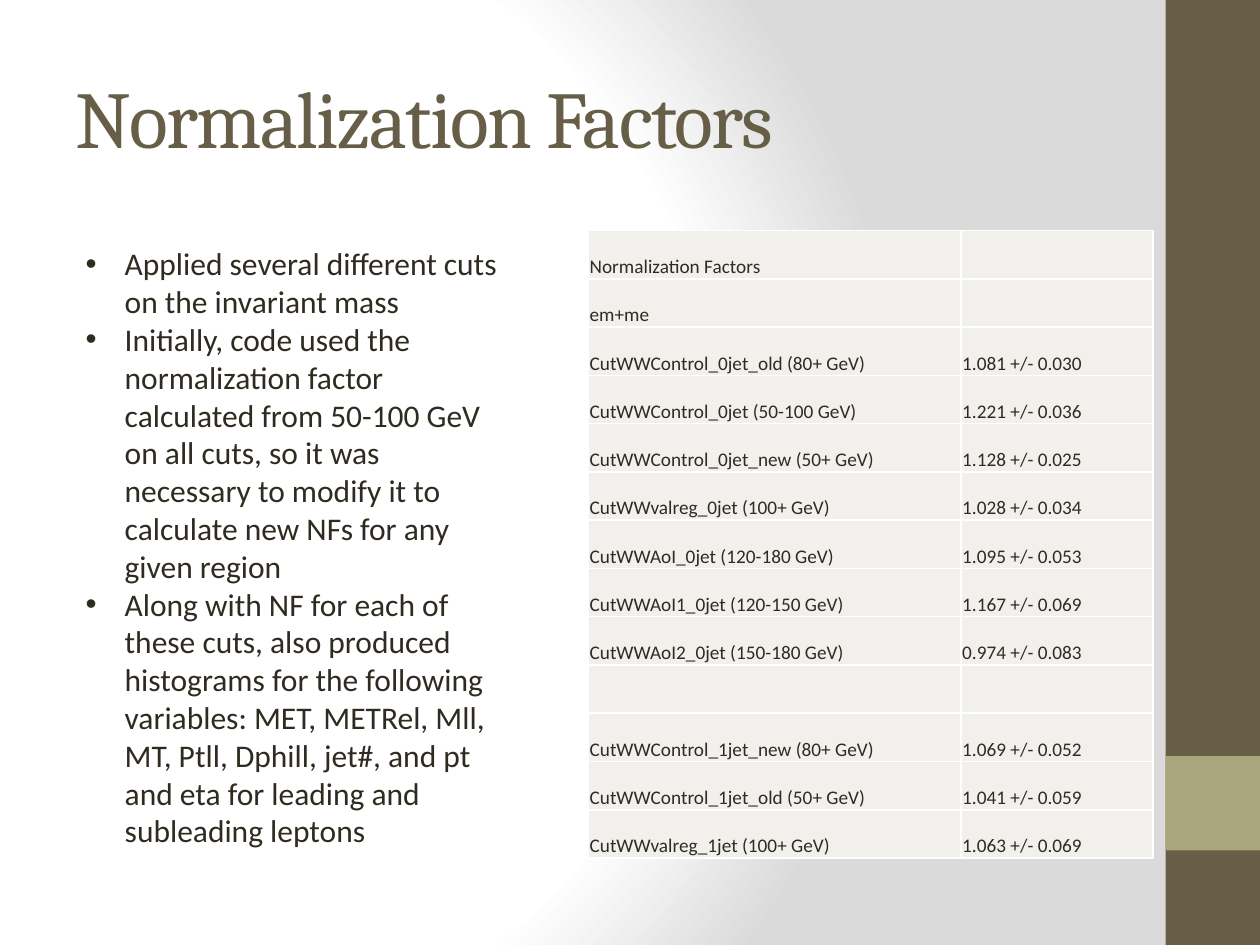
from dataclasses import dataclass
from typing import NamedTuple

from lxml import etree
from pptx import Presentation
from pptx.dml.color import RGBColor
from pptx.enum.shapes import MSO_SHAPE
from pptx.enum.text import MSO_ANCHOR, MSO_AUTO_SIZE, PP_ALIGN
from pptx.oxml import parse_xml
from pptx.oxml.ns import nsdecls, qn
from pptx.util import Inches, Pt

RECTANGLE = MSO_SHAPE.RECTANGLE
TOP, MIDDLE, BOTTOM = MSO_ANCHOR.TOP, MSO_ANCHOR.MIDDLE, MSO_ANCHOR.BOTTOM
LEFT = PP_ALIGN.LEFT
FIT_NONE, FIT_SHAPE = MSO_AUTO_SIZE.NONE, MSO_AUTO_SIZE.SHAPE_TO_FIT_TEXT
TITLE_AND_CONTENT = 1


@dataclass(frozen=True)
class Theme:
    heading_font: str = "Cambria"
    body_font: str = "Calibri"
    title_size: int = 46
    body_size: int = 18
    table_size: int = 11
    brown: str = "675E47"
    olive: str = "A9A57C"
    ink: str = "2F2B20"
    cell: str = "F1F0EC"
    white: str = "FFFFFF"
    grey: str = "DADADA"


class Box(NamedTuple):
    left: int
    top: int
    width: int
    height: int


THEME = Theme()
WIDTH, HEIGHT = Inches(10), Inches(7.5)

TITLE = "Normalization Factors"
POINTS = [
    "Applied several different cuts on the invariant mass",
    "Initially, code used the normalization factor calculated from 50-100 GeV on all cuts, "
    "so it was necessary to modify it to calculate new NFs for any given region",
    "Along with NF for each of these cuts, also produced histograms for the following "
    "variables: MET, METRel, Mll, MT, Ptll, Dphill, jet#, and pt and eta for leading and "
    "subleading leptons",
]
FACTORS = [
    ("Normalization Factors", ""),
    ("em+me", ""),
    ("CutWWControl_0jet_old (80+ GeV)", "1.081 +/- 0.030"),
    ("CutWWControl_0jet (50-100 GeV)", "1.221 +/- 0.036"),
    ("CutWWControl_0jet_new (50+ GeV)", "1.128 +/- 0.025"),
    ("CutWWvalreg_0jet (100+ GeV)", "1.028 +/- 0.034"),
    ("CutWWAoI_0jet (120-180 GeV)", "1.095 +/- 0.053"),
    ("CutWWAoI1_0jet (120-150 GeV)", "1.167 +/- 0.069"),
    ("CutWWAoI2_0jet (150-180 GeV)", "0.974 +/- 0.083"),
    ("", ""),
    ("CutWWControl_1jet_new (80+ GeV)", "1.069 +/- 0.052"),
    ("CutWWControl_1jet_old (50+ GeV)", "1.041 +/- 0.059"),
    ("CutWWvalreg_1jet (100+ GeV)", "1.063 +/- 0.069"),
]


def share(left, top, width, height):
    """Box given in percent of the slide's size."""
    return Box(int(WIDTH * left / 100), int(HEIGHT * top / 100),
               int(WIDTH * width / 100), int(HEIGHT * height / 100))


def place(shape, box):
    shape.left, shape.top, shape.width, shape.height = box


def write(frame, lines, *, font, size, color, bullet=None, indent=0, tracking=None):
    for index, line in enumerate(lines):
        para = frame.paragraphs[0] if index == 0 else frame.add_paragraph()
        if bullet:
            properties = para._p.get_or_add_pPr()
            properties.set("marL", str(indent))
            properties.set("indent", str(-indent))
            etree.SubElement(properties, qn("a:buFont")).set("typeface", "Arial")
            etree.SubElement(properties, qn("a:buChar")).set("char", bullet)
        para.alignment = LEFT
        para.space_before = para.space_after = Pt(0)
        span = para.add_run()
        span.text = line
        span.font.name = font
        span.font.size = Pt(size)
        span.font.color.rgb = RGBColor.from_string(color)
        if tracking is not None:
            span._r.get_or_add_rPr().set("spc", str(int(tracking * 100)))


def paint_background(page):
    stops = [(0, THEME.white), (75, THEME.white), (100, THEME.grey)]
    stop_xml = "".join(
        f'<a:gs pos="{position * 1000}"><a:srgbClr val="{color}"/></a:gs>'
        for position, color in stops)
    background = parse_xml(
        f'<p:bg {nsdecls("p", "a")}><p:bgPr><a:gradFill rotWithShape="1">'
        f'<a:gsLst>{stop_xml}</a:gsLst><a:path path="circle">'
        '<a:fillToRect l="20000" t="50000" r="100000" b="50000"/></a:path>'
        '</a:gradFill><a:effectLst/></p:bgPr></p:bg>')
    page._element.cSld.insert(0, background)


def add_side_band(page, box):
    # The accent is the fifth square of the band, counted from the box's top in widths
    accent = Box(box.left, box.top + 8 * box.width, box.width, box.width)
    for area, color in ((box, THEME.brown), (accent, THEME.olive)):
        panel = page.shapes.add_shape(RECTANGLE, *area)
        panel.shadow.inherit = False
        panel.fill.solid()
        panel.fill.fore_color.rgb = RGBColor.from_string(color)
        panel.line.fill.background()


def fill_title(page, box):
    title = page.shapes.title
    place(title, box)
    frame = title.text_frame
    frame.auto_size = FIT_NONE
    frame.vertical_anchor = MIDDLE
    write(frame, [TITLE], font=THEME.heading_font, size=THEME.title_size,
          color=THEME.brown, tracking=-1)


def fill_points(page, box):
    body = page.placeholders[1]
    place(body, box)
    frame = body.text_frame
    frame.word_wrap = True
    frame.auto_size = FIT_SHAPE
    frame.vertical_anchor = TOP
    write(frame, POINTS, font=THEME.body_font, size=THEME.body_size,
          color=THEME.ink, bullet="•", indent=Inches(0.31))


def style_cell(cell):
    cell.margin_left = cell.margin_right = cell.margin_top = Inches(0.01)
    cell.margin_bottom = 0
    cell.vertical_anchor = BOTTOM
    properties = cell._tc.get_or_add_tcPr()
    for side in ("lnL", "lnR", "lnT", "lnB"):
        properties.append(parse_xml(
            f'<a:{side} {nsdecls("a")} w="{Pt(1)}"><a:solidFill>'
            f'<a:srgbClr val="{THEME.white}"/></a:solidFill></a:{side}>'))
    cell.fill.solid()
    cell.fill.fore_color.rgb = RGBColor.from_string(THEME.cell)


def add_factor_table(page, box):
    table = page.shapes.add_table(len(FACTORS), 2, *box).table
    table.first_row = table.horz_banding = False
    for column, part in zip(table.columns, (0.66, 0.34)):
        column.width = int(box.width * part)
    for row, values in zip(table.rows, FACTORS):
        row.height = box.height // len(FACTORS)
        for cell, value in zip(row.cells, values):
            style_cell(cell)
            write(cell.text_frame, [value], font=THEME.body_font,
                  size=THEME.table_size, color=THEME.ink)


def main():
    deck = Presentation()
    deck.slide_width, deck.slide_height = WIDTH, HEIGHT
    page = deck.slides.add_slide(deck.slide_layouts[TITLE_AND_CONTENT])
    paint_background(page)
    add_side_band(page, share(92.5, 0, 7.5, 100))
    fill_title(page, share(5, 4, 83.3, 16.67))
    add_factor_table(page, share(46.7, 24.4, 44.8, 66.4))
    fill_points(page, share(5.8, 25.2, 35, 66))
    deck.save("out.pptx")


if __name__ == "__main__":
    main()
